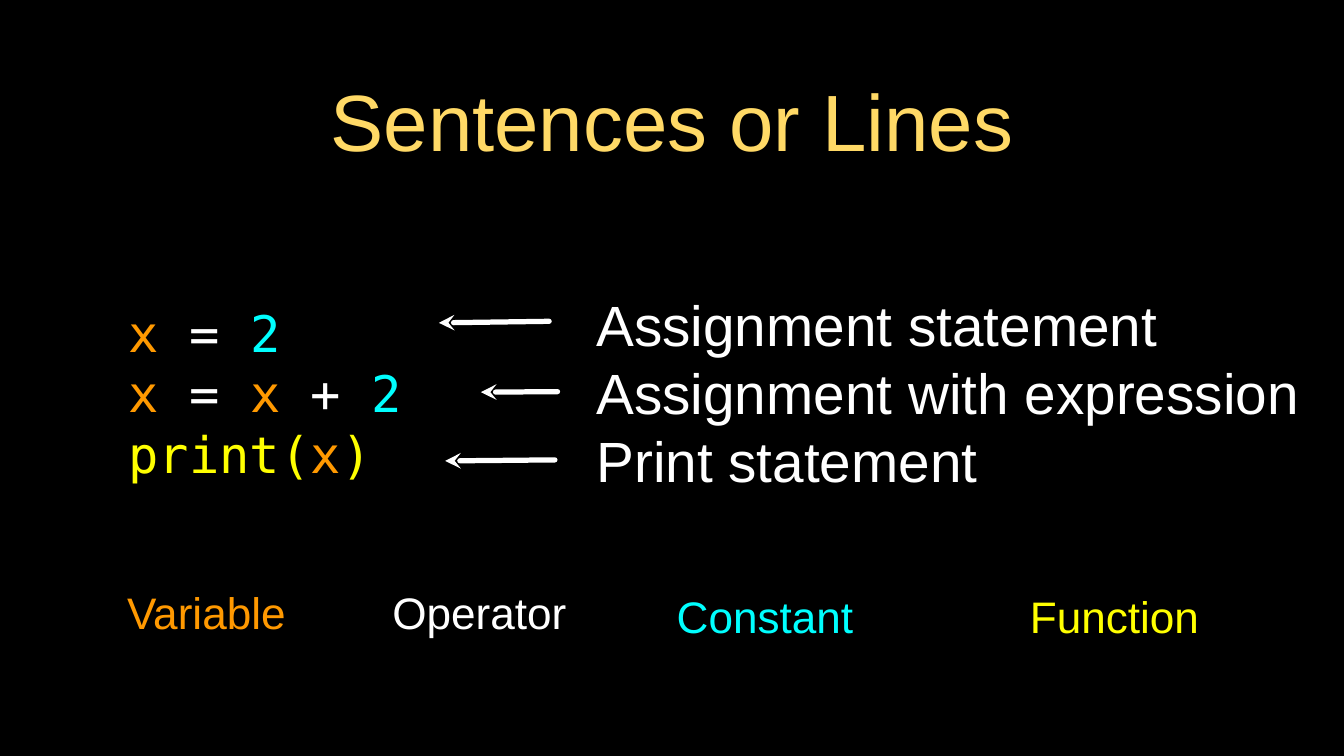
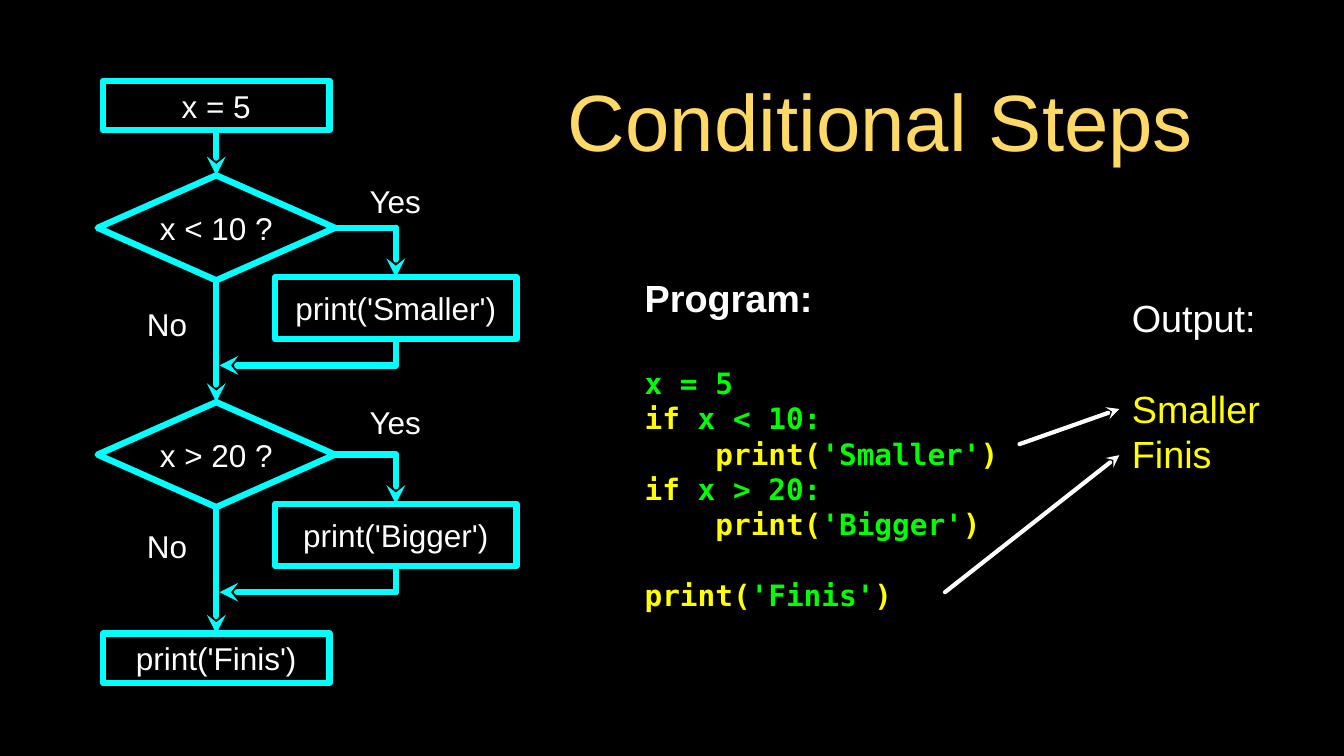
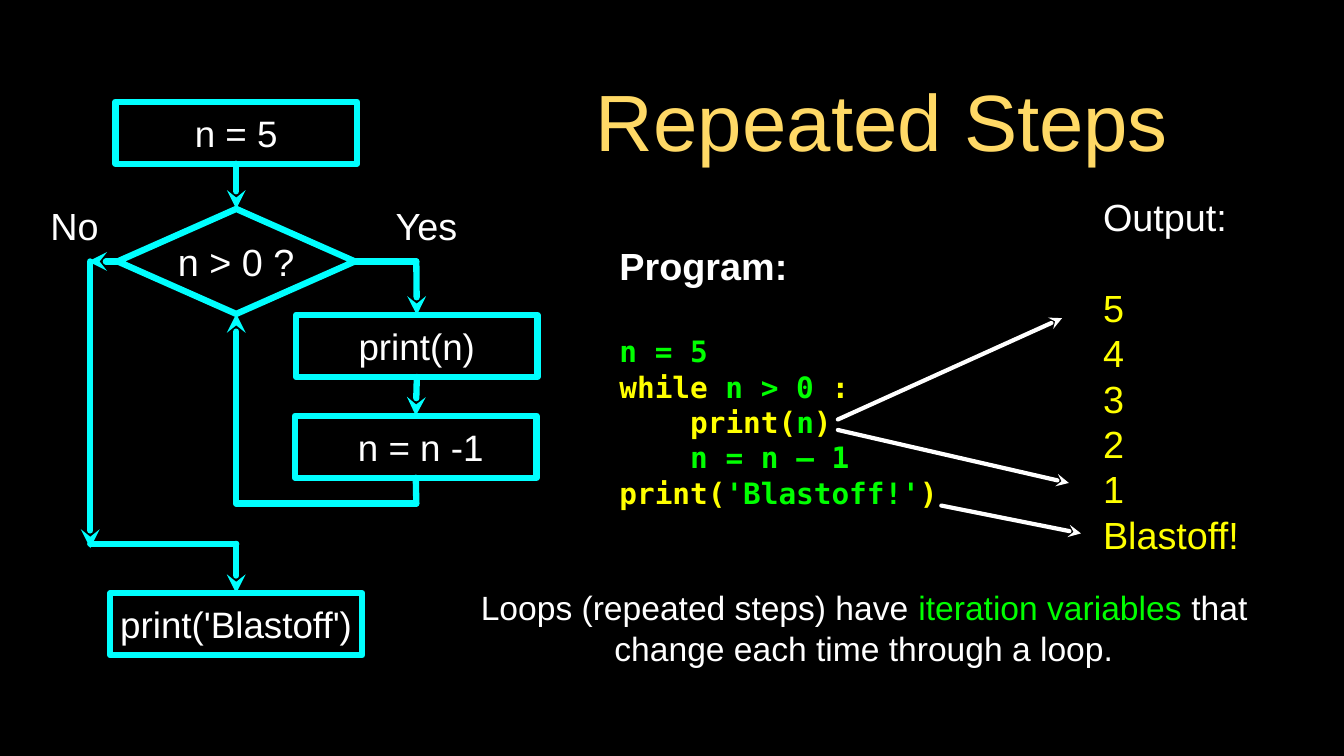
from lxml import etree
from pptx import Presentation
from pptx.dml.color import RGBColor
from pptx.enum.shapes import MSO_CONNECTOR, MSO_SHAPE
from pptx.enum.text import MSO_ANCHOR, MSO_AUTO_SIZE, PP_ALIGN
from pptx.oxml.ns import qn
from pptx.util import Pt

STRAIGHT = MSO_CONNECTOR.STRAIGHT
RECT, DIAMOND = MSO_SHAPE.RECTANGLE, MSO_SHAPE.DIAMOND
LEFT, CENTER = PP_ALIGN.LEFT, PP_ALIGN.CENTER
MIDDLE, NO_FIT = MSO_ANCHOR.MIDDLE, MSO_AUTO_SIZE.NONE
TOP_SIDE, LEFT_SIDE, BOTTOM_SIDE, RIGHT_SIDE = range(4)

COLORS = {
    "background": "000000", "title": "FFD966", "white": "FFFFFF",
    "orange": "FF9900", "cyan": "00FFFF", "yellow": "FFFF00", "green": "00FF00",
}
SANS, MONO = "Arial", "DejaVu Sans Mono"
LEADING = 1.2
HEADING_SIZE, CODE_SIZE = 36, 28
CODE_INDENT = 67.4  # four monospaced characters
TITLE_TOP, TITLE_HEIGHT, TITLE_RIGHT = 60.5, 107, 1216
FLOW_WEIGHT = 6


def rgb(name):
    return RGBColor.from_string(COLORS[name])


# ---- Shared helpers ----
def prepare(frame, inset=0, wrap=True):
    frame.auto_size = NO_FIT
    frame.word_wrap = wrap
    frame.vertical_anchor = MIDDLE
    frame.margin_left = frame.margin_right = Pt(inset)
    frame.margin_top = frame.margin_bottom = Pt(inset)
    return frame


def write(frame, runs, size, color="white", font=SANS, bold=False,
          align=LEFT, before=0, indent=0):
    """Write one paragraph; runs is a string or a list of (text, color)."""
    paragraph = frame.paragraphs[0]
    if paragraph.runs:
        paragraph = frame.add_paragraph()
    paragraph.alignment = align
    paragraph.line_spacing = Pt(size * LEADING)
    paragraph.space_before = Pt(before)
    if indent:
        paragraph._p.get_or_add_pPr().set("marL", str(Pt(indent)))
    for text, run_color in [(runs, color)] if isinstance(runs, str) else runs:
        run = paragraph.add_run()
        run.text = text
        run.font.size = Pt(size)
        run.font.name = font
        run.font.bold = bold
        run.font.color.rgb = rgb(run_color)


def text_area(slide, box):
    return prepare(slide.shapes.add_textbox(*map(Pt, box)).text_frame)


def label(slide, box, text, size, color="white"):
    write(text_area(slide, box), text, size, color, align=CENTER)


def round_line(line, color, weight, arrow=False):
    line.color.rgb = rgb(color)
    line.width = Pt(weight)
    ln = line._get_or_add_ln()
    ln.set("cap", "rnd")
    etree.SubElement(ln, qn("a:round"))
    if arrow:
        etree.SubElement(ln, qn("a:tailEnd"), type="stealth")


def node(slide, kind, box, text, size):
    shape = slide.shapes.add_shape(kind, *map(Pt, box))
    shape.shadow.inherit = False
    shape.fill.background()
    round_line(shape.line, "cyan", FLOW_WEIGHT)
    write(prepare(shape.text_frame, wrap=False), text, size, align=CENTER)
    return shape


def site(end):
    """Point of an (x, y) pair, or None for a (shape, side) pair."""
    return end if isinstance(end[0], (int, float)) else None


def connect(slide, start, end, arrow=True, color="cyan", weight=FLOW_WEIGHT):
    """Join two ends, each an (x, y) point or a (shape, side) pair."""
    points = [site(start) or (0, 0), site(end) or (0, 0)]
    line = slide.shapes.add_connector(
        STRAIGHT, *(Pt(value) for point in points for value in point))
    if not site(start):
        line.begin_connect(*start)
    if not site(end):
        line.end_connect(*end)
    round_line(line.line, color, weight, arrow)
    etree.SubElement(line._element.spPr, qn("a:effectLst"))


def pointers(slide, pairs, weight):
    for start, end in pairs:
        connect(slide, start, end, color="white", weight=weight)


def new_slide(prs, title, title_left):
    slide = prs.slides.add_slide(prs.slide_layouts[5])
    heading = slide.shapes.title
    heading.left, heading.top = Pt(title_left), Pt(TITLE_TOP)
    heading.width, heading.height = Pt(TITLE_RIGHT - title_left), Pt(TITLE_HEIGHT)
    write(prepare(heading.text_frame, inset=3), title, 76, "title", align=CENTER)
    return slide


# ---- Program and output columns ----
def program(slide, box, code):
    """code lists (runs, indent steps, blank lines before)."""
    frame = text_area(slide, box)
    write(frame, "Program:", HEADING_SIZE, bold=True)
    for row, (runs, steps, blanks) in enumerate(code):
        gap = blanks * CODE_SIZE if row else HEADING_SIZE
        write(frame, runs, CODE_SIZE, font=MONO, bold=True,
              before=gap * LEADING, indent=steps * CODE_INDENT)


def output(slide, box, results):
    frame = text_area(slide, box)
    write(frame, "Output:", HEADING_SIZE)
    for row, result in enumerate(results):
        write(frame, result, HEADING_SIZE, "yellow",
              before=0 if row else HEADING_SIZE * LEADING)


def print_call(argument):
    return [("print(", "yellow"), (argument, "green"), (")", "yellow")]


# ---- Slide 1: statements and their kinds ----
def statements(slide, code_box, kinds_box):
    code = text_area(slide, code_box)
    for runs in (
        [("x ", "orange"), ("= ", "white"), ("2", "cyan")],
        [("x ", "orange"), ("= ", "white"), ("x ", "orange"),
         ("+ ", "white"), ("2", "cyan")],
        [("print(", "yellow"), ("x", "orange"), (")", "yellow")],
    ):
        write(code, runs, 48, font=MONO)
    kinds = text_area(slide, kinds_box)
    for kind in ("Assignment statement", "Assignment with expression",
                 "Print statement"):
        write(kinds, kind, 54)


def color_key(slide, top):
    for word, color, left, width, drop in (
        ("Variable", "orange", 104.5, 184, 0),
        ("Operator", "white", 370, 173, 0),
        ("Constant", "cyan", 636.5, 184, 4),
        ("Function", "yellow", 924, 275, 4),
    ):
        label(slide, (left, top + drop, width, 57), word, 42, color)


def sentences_slide(prs):
    slide = new_slide(prs, "Sentences or Lines", 64)
    statements(slide, (122.5, 215, 315, 318), (568, 214, 699, 318))
    color_key(slide, 554)
    pointers(slide, (((523, 306), (418, 307.5)), ((531, 373), (458, 373.5)),
                     ((528.5, 438), (424, 439))), weight=5)


# ---- Slide 2: flow with two decisions ----
def decision(slide, left, top, question, action, label_shift):
    """Diamond with a Yes branch to an action that returns to the main line."""
    test = node(slide, DIAMOND, (left, top, 226, 100), question, 30)
    step = node(slide, RECT, (left + 169, top + 97, 230, 59), action, 30)
    main_x, branch_x = left + 113, left + 284
    corner, rejoin = (branch_x, top + 50), (branch_x, top + 181)
    connect(slide, (test, RIGHT_SIDE), corner, arrow=False)
    connect(slide, corner, (step, TOP_SIDE))
    connect(slide, (step, BOTTOM_SIDE), rejoin, arrow=False)
    connect(slide, rejoin, (main_x + 3, top + 181))
    label(slide, (left + 255, top - 0.5 + label_shift, 57, 49), "Yes", 30)
    label(slide, (left + 37.5, top + 117 + label_shift, 57, 49), "No", 30)
    return test


def conditional_flow(slide, left, top):
    start = node(slide, RECT, (left + 5, top, 216, 47), "x = 5", 30)
    smaller = decision(slide, left, top + 90, "x < 10 ?", "print('Smaller')", 0)
    bigger = decision(slide, left, top + 306, "x > 20 ?", "print('Bigger')", -5)
    finish = node(slide, RECT, (left + 5, top + 526.5, 216, 47), "print('Finis')", 30)
    chain = (start, smaller, bigger, finish)
    for upper, lower in zip(chain, chain[1:]):
        connect(slide, (upper, BOTTOM_SIDE), (lower, TOP_SIDE))


def conditional_slide(prs):
    slide = new_slide(prs, "Conditional Steps", 461)
    output(slide, (1078, 281, 125, 172), ("Smaller", "Finis"))
    program(slide, (614, 226, 357, 392.5), (
        ([("x = 5", "green")], 0, 0),
        ([("if ", "yellow"), ("x < 10:", "green")], 0, 0),
        (print_call("'Smaller'"), 1, 0),
        ([("if ", "yellow"), ("x > 20:", "green")], 0, 0),
        (print_call("'Bigger'"), 1, 0),
        (print_call("'Finis'"), 0, 1),
    ))
    conditional_flow(slide, 93, 77)
    pointers(slide, (((971, 423), (1066, 389.5)), ((900, 564), (1066, 433.5))),
             weight=4)


# ---- Slide 3: flow with a loop ----
def loop_flow(slide, left, top):
    start = node(slide, RECT, (left + 5, top, 230, 59), "n = 5", 35)
    test = node(slide, DIAMOND, (left + 7, top + 102, 226, 100), "n > 0 ?", 36)
    show = node(slide, RECT, (left + 177, top + 203, 230, 59), "print(n)", 35)
    count = node(slide, RECT, (left + 176, top + 299, 230, 59), " n = n -1", 35)
    finish = node(slide, RECT, (left, top + 468, 240, 59), "print('Blastoff')", 35)
    main_x, body_x, exit_x = left + 120, left + 291.5, left - 19
    test_y, loop_y, exit_y = top + 152, top + 382.5, top + 421

    # Loop body and way back
    connect(slide, (start, BOTTOM_SIDE), (test, TOP_SIDE))
    connect(slide, (test, RIGHT_SIDE), (body_x, test_y), arrow=False)
    connect(slide, (body_x, test_y), (show, TOP_SIDE))
    connect(slide, (show, BOTTOM_SIDE), (count, TOP_SIDE))
    connect(slide, (count, BOTTOM_SIDE), (body_x, loop_y), arrow=False)
    connect(slide, (body_x, loop_y), (main_x, loop_y), arrow=False)
    connect(slide, (main_x, loop_y), (test, BOTTOM_SIDE))

    # Way out
    connect(slide, (test, LEFT_SIDE), (exit_x - 2, test_y))
    connect(slide, (exit_x, test_y), (exit_x, exit_y + 4))
    connect(slide, (exit_x, exit_y), (main_x, exit_y), arrow=False)
    connect(slide, (main_x, exit_y), (finish, TOP_SIDE))

    label(slide, (left - 62.5, top + 93, 57, 49), "No", 36)
    label(slide, (left + 262, top + 93, 78.5, 49), "Yes", 36)


def repeated_slide(prs):
    slide = new_slide(prs, "Repeated Steps", 464)
    output(slide, (1050.5, 189.5, 157, 336), ("5", "4", "3", "2", "1", "Blastoff!"))
    program(slide, (590, 206, 307, 305), (
        ([("n = 5", "green")], 0, 0),
        ([("while", "yellow"), (" n > 0", "green"), (" :", "yellow")], 0, 0),
        (print_call("n"), 1, 0),
        ([("n = n – 1", "green")], 1, 0),
        (print_call("'Blastoff!'"), 0, 0),
    ))
    loop_flow(slide, 105, 97)
    pointers(slide, (((798, 399.5), (1011.5, 303)), ((798, 409.5), (1018, 460)),
                     ((896.5, 481.5), (1029.5, 508))), weight=4)
    write(text_area(slide, (406, 551, 834, 93.5)), [
        ("Loops (repeated steps) have ", "white"),
        ("iteration variables ", "green"),
        ("that change each time through a loop.", "white"),
    ], 32, align=CENTER)


def main():
    prs = Presentation()
    prs.slide_width, prs.slide_height = Pt(1280), Pt(720)
    backdrop = prs.slide_master.background.fill
    backdrop.solid()
    backdrop.fore_color.rgb = rgb("background")
    sentences_slide(prs)
    conditional_slide(prs)
    repeated_slide(prs)
    prs.save("out.pptx")


if __name__ == "__main__":
    main()
